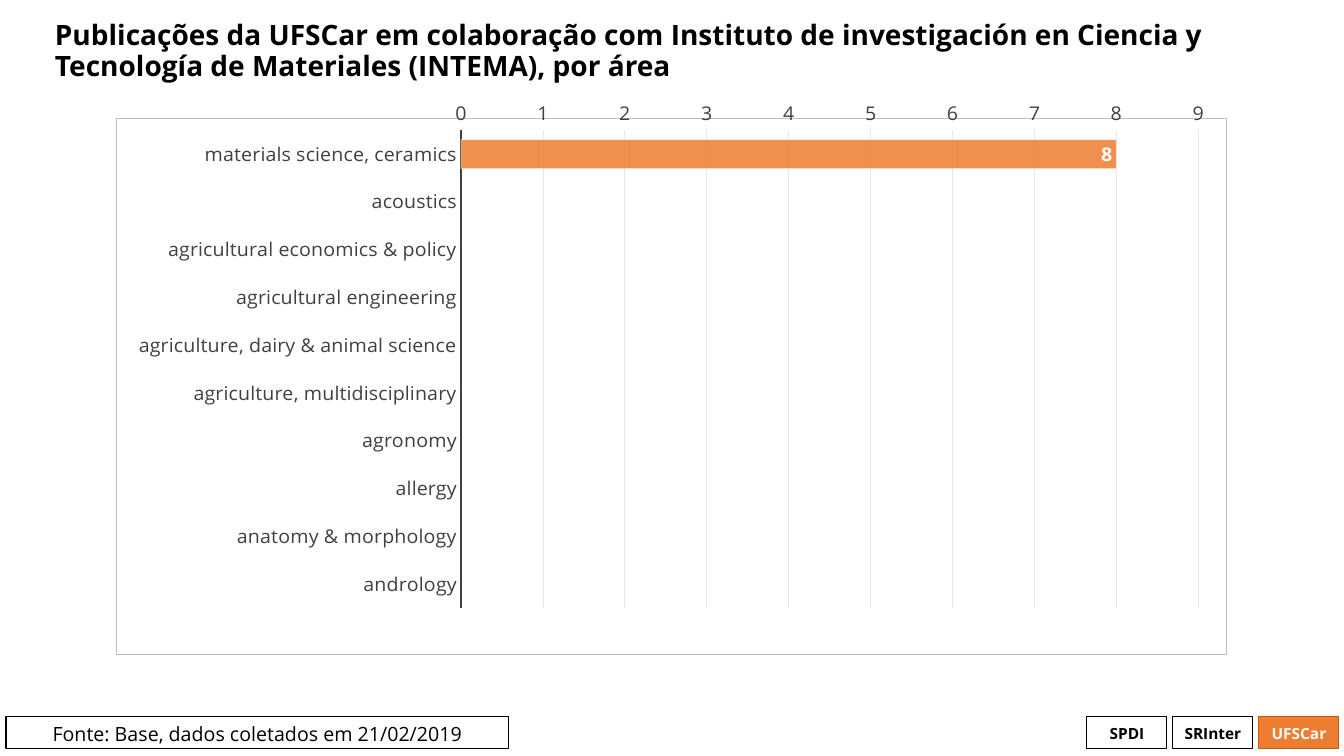
from lxml import etree
from pptx import Presentation
from pptx.chart.data import CategoryChartData
from pptx.dml.color import RGBColor
from pptx.enum.chart import XL_AXIS_CROSSES, XL_CHART_TYPE, XL_LABEL_POSITION, XL_TICK_MARK
from pptx.enum.shapes import MSO_SHAPE
from pptx.enum.text import MSO_ANCHOR, PP_ALIGN
from pptx.oxml import parse_xml
from pptx.oxml.ns import nsdecls, qn
from pptx.util import Pt

RECT = MSO_SHAPE.RECTANGLE
BARS = XL_CHART_TYPE.BAR_CLUSTERED
NO_TICK = XL_TICK_MARK.NONE
AT_MAX = XL_AXIS_CROSSES.MAXIMUM
IN_END = XL_LABEL_POSITION.INSIDE_END
LEFT, CENTER = PP_ALIGN.LEFT, PP_ALIGN.CENTER
TOP, MIDDLE = MSO_ANCHOR.TOP, MSO_ANCHOR.MIDDLE

TITLE = ("Publicações da UFSCar em colaboração com Instituto de investigación "
         "en Ciencia y Tecnología de Materiales (INTEMA), por área")
SOURCE = "Fonte: Base, dados coletados em 21/02/2019"
# label, fill, line, text colour
TAGS = [
    ("SPDI", None, "black", "black"),
    ("SRInter", None, "black", "black"),
    ("UFSCar", "orange", "rust", "white"),
]
AREAS = [
    ("materials science, ceramics", 8),
    ("acoustics", None),
    ("agricultural economics & policy", None),
    ("agricultural engineering", None),
    ("agriculture, dairy & animal science", None),
    ("agriculture, multidisciplinary", None),
    ("agronomy", None),
    ("allergy", None),
    ("anatomy & morphology", None),
    ("andrology", None),
]
THEME = {
    "font": "Open Sans",
    "size": {"title": 20, "body": 14, "tag": 11},
    "color": {"black": "000000", "white": "FFFFFF", "orange": "ED7D31", "rust": "C55A11",
              "text": "404040", "grid": "E7E7E7", "frame": "BFBFBF"},
}

# Lengths in px: left, top, width, height
SCALE = 914400 / 100.8
PAGE = (1344, 756)
TITLE_BOX = (45, 6, 1251, 92)
SOURCE_BOX = (6, 717, 503, 32)
TAG_BOX = (1087, 717, 80, 32)
TAG_STEP = 86
CHART_BOX = (116, 100, 1111, 555)
PLOT_BOX = (461, 112, 738, 495)


def emu(box):
    return [round(n * SCALE) for n in box]


def rgb(name):
    return RGBColor.from_string(THEME["color"][name])


def style(font, size, color, bold=False):
    look = {"name": THEME["font"], "size": Pt(THEME["size"][size]), "bold": bold}
    for key, val in look.items():
        setattr(font, key, val)
    font.color.rgb = rgb(color)


def stroke(line, color, width=0.75):
    line.color.rgb = rgb(color)
    line.width = Pt(width)


def fade(node, share):
    """Set the opacity of a solid fill or line, in percent."""
    for clr in node.iter(qn("a:srgbClr")):
        etree.SubElement(clr, qn("a:alpha")).set("val", str(share * 1000))


def write(shape, text, size, color, bold, align, anchor):
    frame = shape.text_frame
    frame.word_wrap = True
    frame.vertical_anchor = anchor
    para = frame.paragraphs[0]
    para.alignment = align
    run = para.add_run()
    run.text = text
    style(run.font, size, color, bold)
    return para


def add_box(slide, box, fill, line):
    shape = slide.shapes.add_shape(RECT, *emu(box))
    shape.shadow.inherit = False
    if fill:
        shape.fill.solid()
        shape.fill.fore_color.rgb = rgb(fill)
    else:
        shape.fill.background()
    stroke(shape.line, line)
    return shape


def add_frame(chart):
    """Give the chart area its fill and border, and fix the plot in place."""
    color = THEME["color"]
    area = parse_xml(
        f'<c:spPr {nsdecls("c", "a")}>'
        f'<a:solidFill><a:srgbClr val="{color["white"]}"/></a:solidFill>'
        f'<a:ln w="{Pt(0.75)}"><a:solidFill><a:srgbClr val="{color["frame"]}"/>'
        '</a:solidFill></a:ln></c:spPr>')
    root = chart.element
    root.find(qn("c:chart")).addnext(area)

    left, top, wide, high = CHART_BOX
    x, y, w, h = PLOT_BOX
    parts = {"x": (x - left) / wide, "y": (y - top) / high, "w": w / wide, "h": h / high}
    rows = "".join(f'<c:{key} val="{val:.4f}"/>' for key, val in parts.items())
    layout = parse_xml(
        f'<c:layout {nsdecls("c")}><c:manualLayout><c:layoutTarget val="inner"/>'
        f'<c:xMode val="edge"/><c:yMode val="edge"/>{rows}</c:manualLayout></c:layout>')
    plot = root.find(".//" + qn("c:plotArea"))
    for old in plot.findall(qn("c:layout")):
        plot.remove(old)
    plot.insert(0, layout)


def add_bars(slide):
    data = CategoryChartData()
    data.categories = [name for name, _ in AREAS]
    data.add_series("Series 1", [val for _, val in AREAS])
    chart = slide.shapes.add_chart(BARS, *emu(CHART_BOX), data).chart
    chart.has_legend = chart.has_title = False
    style(chart.font, "body", "black")
    add_frame(chart)

    cats, vals = chart.category_axis, chart.value_axis
    formats = [
        (cats, {"reverse_order": True, "crosses": AT_MAX, "has_major_gridlines": False}),
        (vals, {"minimum_scale": 0, "maximum_scale": 9, "major_unit": 1,
                "has_major_gridlines": True}),
    ]
    for axis, look in formats:
        look |= {"major_tick_mark": NO_TICK, "minor_tick_mark": NO_TICK}
        for key, val in look.items():
            setattr(axis, key, val)
        style(axis.tick_labels.font, "body", "text")
    stroke(cats.format.line, "text", 1.5)
    vals.format.line.fill.background()
    stroke(vals.major_gridlines.format.line, "grid")

    plot = chart.plots[0]
    plot.gap_width = 65
    plot.vary_by_categories = False
    bar = plot.series[0]
    bar.format.fill.solid()
    bar.format.fill.fore_color.rgb = rgb("orange")
    stroke(bar.format.line, "white")
    props = chart.element.find(f'.//{qn("c:ser")}/{qn("c:spPr")}')
    fade(props.find(qn("a:solidFill")), 85)
    fade(props.find(qn("a:ln")), 50)
    labels = bar.data_labels
    labels.show_value = True
    labels.position = IN_END
    style(labels.font, "body", "white", True)


def main():
    deck = Presentation()
    deck.slide_width, deck.slide_height = emu(PAGE)
    slide = deck.slides.add_slide(deck.slide_layouts[6])

    left, top, wide, high = TAG_BOX
    for i, (text, fill, line, color) in enumerate(TAGS):
        tag = add_box(slide, (left + i * TAG_STEP, top, wide, high), fill, line)
        write(tag, text, "tag", color, True, CENTER, MIDDLE)
    note = add_box(slide, SOURCE_BOX, None, "black")
    write(note, SOURCE, "body", "black", False, CENTER, TOP)
    title = slide.shapes.add_textbox(*emu(TITLE_BOX))
    write(title, TITLE, "title", "black", True, LEFT, MIDDLE).line_spacing = 0.9
    add_bars(slide)
    deck.save("out.pptx")


if __name__ == "__main__":
    main()
